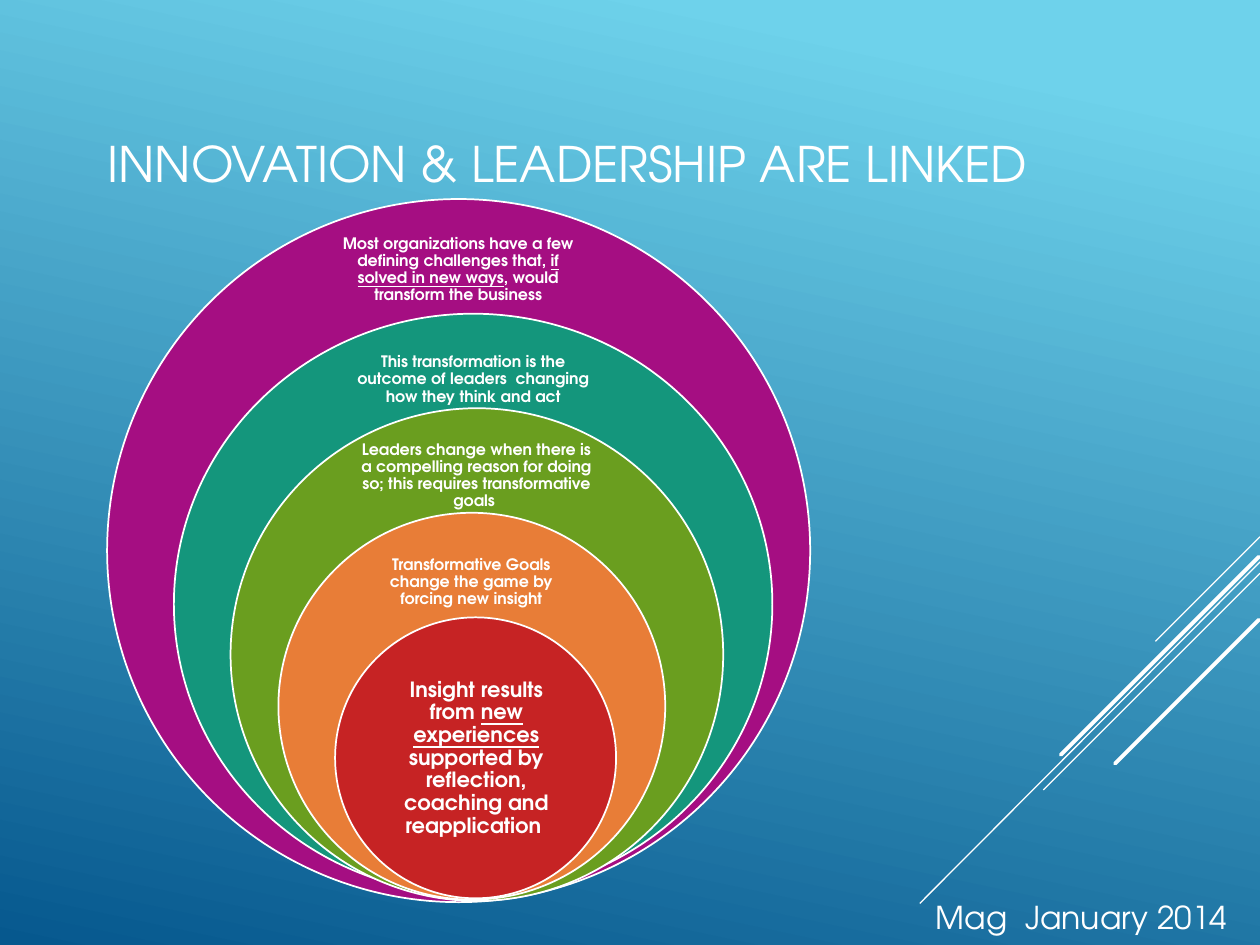
from lxml import etree
from pptx import Presentation
from pptx.dml.color import RGBColor
from pptx.enum import shapes, text
from pptx.oxml.ns import qn
from pptx.util import Inches, Pt

WHITE = RGBColor(0xFF, 0xFF, 0xFF)
SKY = RGBColor(0x6E, 0xD2, 0xEB)
NAVY = RGBColor(0x06, 0x58, 0x8E)
PLUM = RGBColor(0xA5, 0x0E, 0x82)
TEAL = RGBColor(0x14, 0x96, 0x7C)
GREEN = RGBColor(0x6A, 0x9E, 0x1F)
ORANGE = RGBColor(0xE8, 0x7D, 0x37)
RED = RGBColor(0xC6, 0x23, 0x24)
FONT = "TeX Gyre Adventor"

RAYS = [
    ((10, 4.26), (9.17, 5.09), 0.75),
    ((10, 4.46), (7.3, 7.17), 0.75),
    ((10, 4.55), (8.28, 6.27), 0.75),
    ((9.99, 4.42), (8.42, 5.99), 2.25),
    ((9.99, 4.92), (8.85, 6.06), 2.25),
]

RINGS = [
    (PLUM, (0.85, 1.58, 5.58, 5.58), (2.59, 1.86, 2.09, 0.56), 9, 0.07,
     ["Most organizations have a few defining challenges that, ",
      "if solved in new ways", ", would transform the business"]),
    (TEAL, (1.38, 2.49, 4.75, 4.61), (2.73, 2.75, 2.05, 0.53), 9, 0.07,
     ["This transformation is the outcome of leaders  changing how they think and act"]),
    (GREEN, (1.83, 3.24, 3.91, 3.91), (2.77, 3.51, 2.02, 0.54), 9, 0.07,
     ["Leaders change when there is a compelling reason for doing so; "
      "this requires transformative goals "]),
    (ORANGE, (2.21, 4.07, 3.07, 3.07), (2.91, 4.35, 1.66, 0.55), 9, 0.07,
     ["Transformative Goals change the game by forcing new insight"]),
    (RED, (2.66, 4.9, 2.23, 2.23), (2.99, 5.46, 1.58, 1.12), 12, 0.09,
     ["Insight results from ", "new experiences ",
      "supported by reflection, coaching and reapplication "]),
]


def inches(box):
    return [Inches(v) for v in box]


def style(para, size, bold=False):
    font = para.font
    font.name, font.size, font.bold = FONT, Pt(size), bold
    font.color.rgb = WHITE


def paint(slide):
    fill = slide.background.fill
    fill.gradient()
    fill.gradient_angle = 258
    for stop, place, color in zip(fill.gradient_stops, (0.1, 1), (SKY, NAVY)):
        stop.position = place
        stop.color.rgb = color


def add_ray(slide, start, end, width):
    ray = slide.shapes.add_connector(
        shapes.MSO_CONNECTOR.STRAIGHT, *inches(start + end))
    ray.line.color.rgb = WHITE
    ray.line.width = Pt(width)
    if width > 1:
        ray.line._get_or_add_ln().set("cap", "rnd")
    etree.SubElement(ray._element.spPr, qn("a:effectLst"))


def add_title(slide, words):
    title = slide.shapes.title
    title.left, title.top, title.width, title.height = inches((0.75, 0.67, 8.5, 1.25))
    frame = title.text_frame
    frame.text = words
    frame.auto_size = text.MSO_AUTO_SIZE.NONE
    frame.vertical_anchor = text.MSO_ANCHOR.MIDDLE
    para = frame.paragraphs[0]
    para.alignment = text.PP_ALIGN.LEFT
    style(para, 28)


def add_ring(slide, color, box):
    ring = slide.shapes.add_shape(shapes.MSO_SHAPE.OVAL, *inches(box))
    ring.shadow.inherit = False
    ring.fill.solid()
    ring.fill.fore_color.rgb = color
    ring.line.color.rgb = WHITE
    ring.line.width = Pt(1)


def add_label(slide, box, size, inset, parts):
    frame = slide.shapes.add_textbox(*inches(box)).text_frame
    frame.word_wrap = True
    frame.vertical_anchor = text.MSO_ANCHOR.MIDDLE
    frame.margin_left = frame.margin_right = Inches(inset)
    frame.margin_top = frame.margin_bottom = Inches(inset)
    para = frame.paragraphs[0]
    para.alignment = text.PP_ALIGN.CENTER
    para.line_spacing = 0.9
    style(para, size, True)
    for i, part in enumerate(parts):
        run = para.add_run()
        run.text = part
        run.font.underline = i == 1


def add_credit(slide, words):
    frame = slide.shapes.add_textbox(*inches((7.33, 7.08, 2.52, 0.4))).text_frame
    frame.word_wrap = True
    frame.auto_size = text.MSO_AUTO_SIZE.SHAPE_TO_FIT_TEXT
    frame.text = words
    style(frame.paragraphs[0], 18)


def main():
    deck = Presentation()
    deck.slide_width, deck.slide_height = inches((10, 7.5))
    slide = deck.slides.add_slide(deck.slide_layouts[5])
    paint(slide)
    for ray in RAYS:
        add_ray(slide, *ray)
    add_title(slide, "INNOVATION & LEADERSHIP ARE LINKED")
    for color, disc, box, size, inset, parts in RINGS:
        add_ring(slide, color, disc)
        add_label(slide, box, size, inset, parts)
    add_credit(slide, "Mag  January 2014")
    deck.save("out.pptx")


if __name__ == "__main__":
    main()
